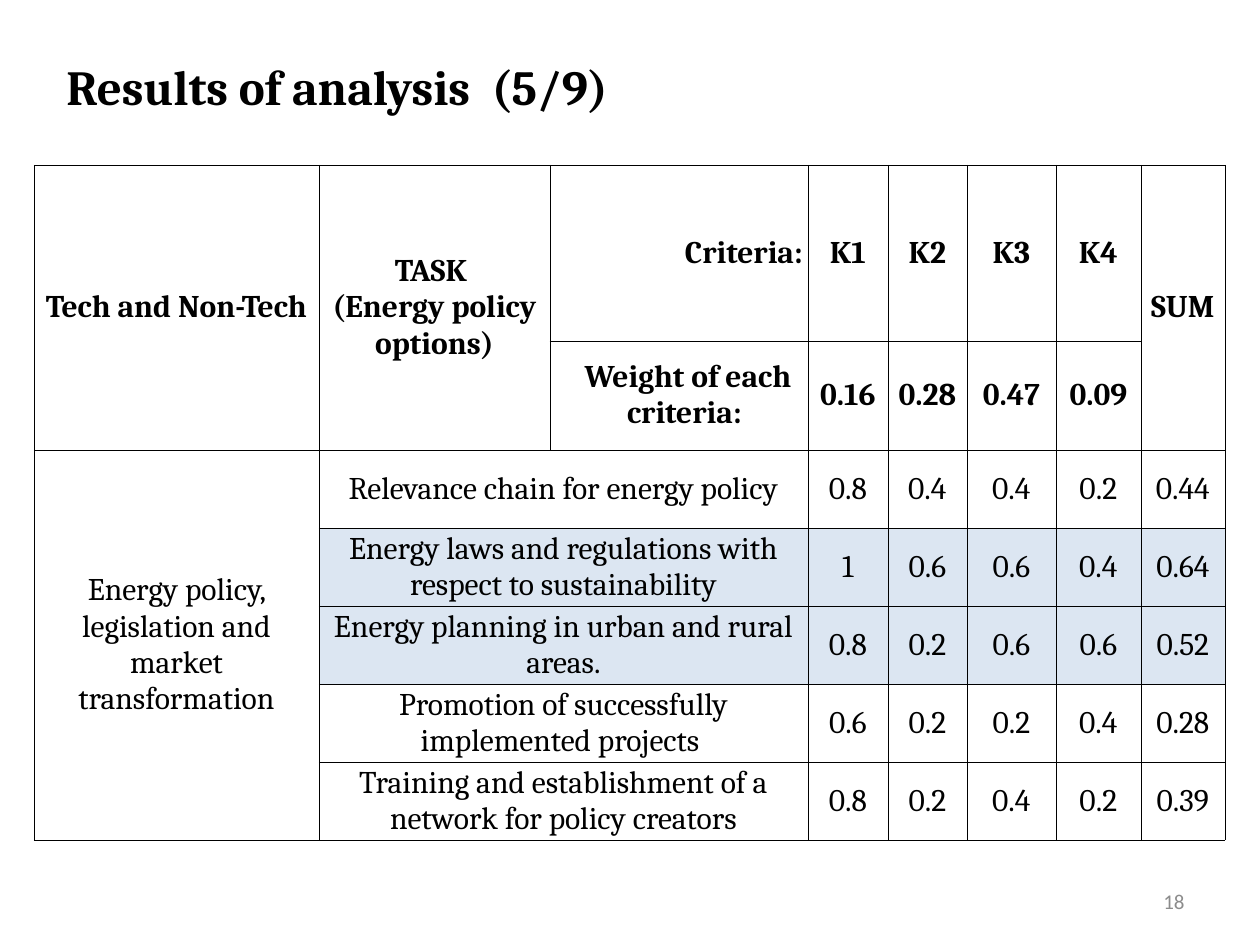
from lxml import etree
from pptx import Presentation, util as u
from pptx.dml.color import RGBColor
from pptx.enum import text
from pptx.oxml.ns import qn

EMU_PER_PX = 914400 / 126
BLACK = RGBColor(0x00, 0x00, 0x00)
GRAY = RGBColor(0x8C, 0x8C, 0x8C)
PALE_BLUE = RGBColor(0xDC, 0xE6, 0xF2)

COLUMN_WIDTHS = [285, 231, 258, 80, 79, 89, 85, 84]
ROW_HEIGHTS = [176, 109] + [78] * 5
HEADER_ROWS = 2
HIGHLIGHTED_ROWS = (3, 4)
# Top row, left column, bottom row, right column
MERGES = [(0, 0, 1, 0), (0, 1, 1, 1), (0, 7, 1, 7), (2, 0, 6, 0)]
MERGES += [(row, 1, row, 2) for row in range(HEADER_ROWS, len(ROW_HEIGHTS))]
INDENTS = {(0, 2): 130, (1, 2): 18}

ROWS = [
    ["Tech and Non-Tech", "TASK \n(Energy policy options)", "Criteria:",
     "K1", "K2", "K3", "K4", "SUM"],
    ["", "", "Weight of each criteria: ", "0.16", "0.28", "0.47", "0.09", ""],
    ["Energy policy, legislation and market transformation",
     "Relevance chain for energy policy", "", "0.8", "0.4", "0.4", "0.2", "0.44"],
    ["", "Energy laws and regulations with respect to sustainability", "",
     "1", "0.6", "0.6", "0.4", "0.64"],
    ["", "Energy planning in urban and rural areas.", "",
     "0.8", "0.2", "0.6", "0.6", "0.52"],
    ["", "Promotion of successfully implemented projects ", "",
     "0.6", "0.2", "0.2", "0.4", "0.28"],
    ["", "Training and establishment of a network for policy creators", "",
     "0.8", "0.2", "0.4", "0.2", "0.39"],
]


def px(length):
    return u.Emu(round(length * EMU_PER_PX))


def add_run(paragraph, content, size, font, color, bold=False):
    run = paragraph.add_run()
    run.text = content
    run.font.size = u.Pt(size)
    run.font.name = font
    run.font.bold = bold
    run.font.color.rgb = color


def add_text(slide, box, content, align, anchor, wrap, **style):
    frame = slide.shapes.add_textbox(*map(px, box)).text_frame
    frame.word_wrap = wrap
    frame.vertical_anchor = anchor
    frame.paragraphs[0].alignment = align
    add_run(frame.paragraphs[0], content, **style)


def set_borders(cell):
    properties = cell._tc.get_or_add_tcPr()
    for side in ("a:lnL", "a:lnR", "a:lnT", "a:lnB"):
        line = etree.SubElement(properties, qn(side), w=str(u.Pt(0.25)))
        fill = etree.SubElement(line, qn("a:solidFill"))
        etree.SubElement(fill, qn("a:srgbClr"), val=str(BLACK))


def fill_cell(cell, content, bold, highlighted, indent):
    cell.margin_left = cell.margin_right = u.Inches(0.02)
    cell.margin_top = cell.margin_bottom = 0
    cell.vertical_anchor = text.MSO_ANCHOR.MIDDLE
    set_borders(cell)
    if highlighted:
        cell.fill.solid()
        cell.fill.fore_color.rgb = PALE_BLUE
    else:
        cell.fill.background()
    if not content:
        return
    frame = cell.text_frame
    for index, line in enumerate(content.split("\n")):
        paragraph = frame.add_paragraph() if index else frame.paragraphs[0]
        paragraph.alignment = text.PP_ALIGN.CENTER
        if indent:
            paragraph._p.get_or_add_pPr().set("marL", str(px(indent)))
        add_run(paragraph, line, 18, "Cambria", BLACK, bold)


def add_score_table(slide, left, top):
    table = slide.shapes.add_table(
        len(ROW_HEIGHTS), len(COLUMN_WIDTHS), px(left), px(top),
        px(sum(COLUMN_WIDTHS)), px(sum(ROW_HEIGHTS))).table
    table.first_row = table.horz_banding = False
    for column, width in zip(table.columns, COLUMN_WIDTHS):
        column.width = px(width)
    for row, height in zip(table.rows, ROW_HEIGHTS):
        row.height = px(height)
    for first_row, first_column, last_row, last_column in MERGES:
        table.cell(first_row, first_column).merge(
            table.cell(last_row, last_column))
    for r, contents in enumerate(ROWS):
        for c, content in enumerate(contents):
            fill_cell(table.cell(r, c), content, bold=r < HEADER_ROWS,
                      highlighted=r in HIGHLIGHTED_ROWS and c > 0,
                      indent=INDENTS.get((r, c)))


def main():
    presentation = Presentation()
    presentation.slide_width, presentation.slide_height = px(1260), px(945)
    slide = presentation.slides.add_slide(presentation.slide_layouts[6])

    # Scores by criterion
    add_score_table(slide, 34, 165)

    # Page number
    add_text(slide, (903, 876, 294, 50), "18", text.PP_ALIGN.RIGHT,
             text.MSO_ANCHOR.MIDDLE, True, size=12, font="Calibri", color=GRAY)

    # Title
    add_text(slide, (54, 50, 587, 72), "Results of analysis  (5/9)",
             text.PP_ALIGN.LEFT, text.MSO_ANCHOR.TOP, False,
             size=28, font="Cambria", color=BLACK, bold=True)

    presentation.save("out.pptx")


if __name__ == "__main__":
    main()
